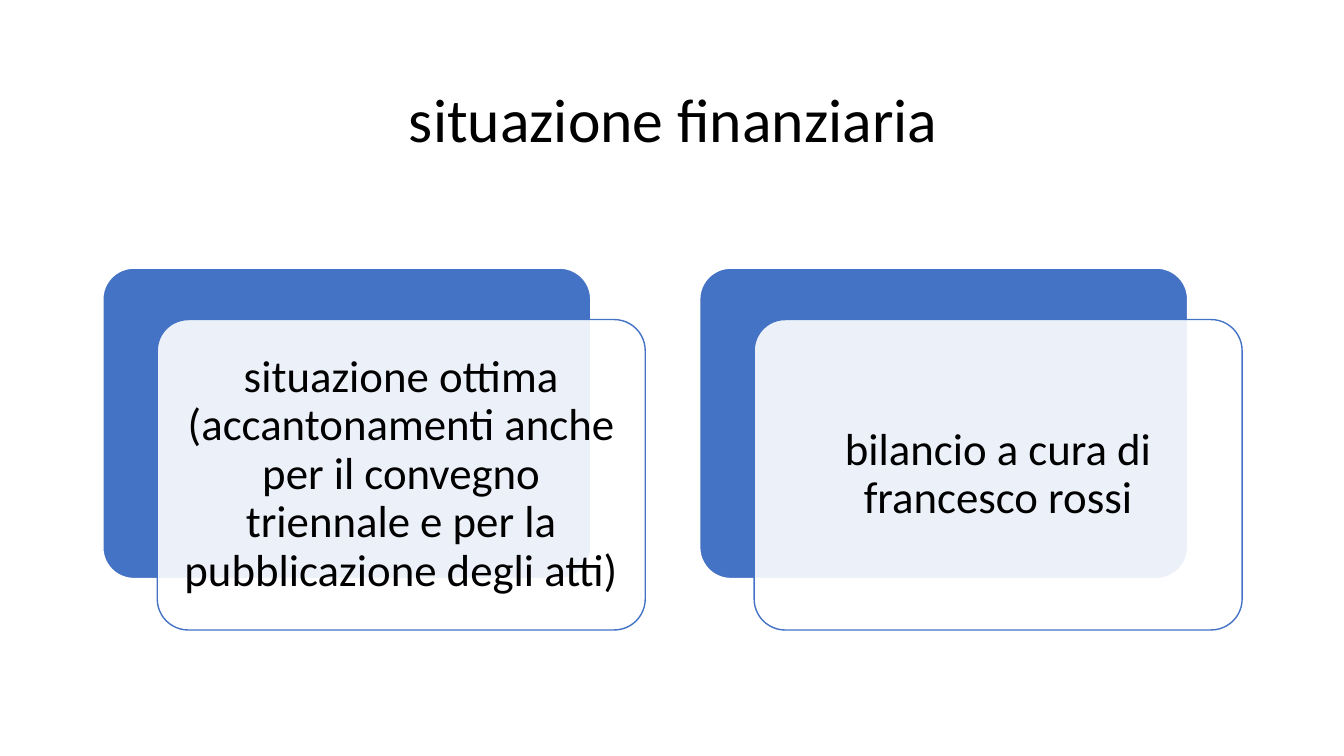
from dataclasses import dataclass

import lxml.etree
import pptx
import pptx.dml.color
import pptx.enum.shapes
import pptx.enum.text
import pptx.oxml.ns
import pptx.util

Inches = pptx.util.Inches


@dataclass(frozen=True)
class Theme:
    font: str = "Calibri"
    title_size: int = 44
    card_size: int = 32
    text: str = "000000"
    accent: str = "4472C4"
    paper: str = "FFFFFF"


def rgb(value):
    return pptx.dml.color.RGBColor.from_string(value)


def write_text(frame, text, *, font, size, color, inset):
    """Fill a frame with one centred paragraph."""
    frame.word_wrap = True
    frame.auto_size = pptx.enum.text.MSO_AUTO_SIZE.NONE
    frame.vertical_anchor = pptx.enum.text.MSO_ANCHOR.MIDDLE
    frame.margin_left = frame.margin_right = Inches(inset)
    frame.margin_top = frame.margin_bottom = Inches(inset)
    paragraph = frame.paragraphs[0]
    paragraph.alignment = pptx.enum.text.PP_ALIGN.CENTER
    paragraph.line_spacing = 0.9
    run = paragraph.add_run()
    run.text = text
    run.font.name = font
    run.font.size = pptx.util.Pt(size)
    run.font.color.rgb = rgb(color)


class SlideBuilder:
    def __init__(self, slide, theme):
        self.slide = slide
        self.theme = theme

    def title(self, text, left, top, width, height):
        title = self.slide.shapes.title
        title.left, title.top = Inches(left), Inches(top)
        title.width, title.height = Inches(width), Inches(height)
        write_text(title.text_frame, text, font=self.theme.font,
                   size=self.theme.title_size, color=self.theme.text, inset=0.1)

    def panel(self, left, top, width, height, fill, line, opacity=100):
        panel = self.slide.shapes.add_shape(
            pptx.enum.shapes.MSO_SHAPE.ROUNDED_RECTANGLE,
            Inches(left), Inches(top), Inches(width), Inches(height))
        panel.adjustments[0] = 0.1
        panel.shadow.inherit = False
        panel.fill.solid()
        panel.fill.fore_color.rgb = rgb(fill)
        panel.line.color.rgb = rgb(line)
        panel.line.width = pptx.util.Pt(1)
        if opacity < 100:
            color = panel.fill._xPr.find(".//" + pptx.oxml.ns.qn("a:srgbClr"))
            alpha = lxml.etree.SubElement(color, pptx.oxml.ns.qn("a:alpha"))
            alpha.set("val", str(opacity * 1000))
        return panel

    def card(self, text, left, top, width, height):
        """Draw a solid panel with a translucent text panel offset over it."""
        theme = self.theme
        self.panel(left, top, width, height, theme.accent, theme.paper)
        front = self.panel(left + 0.54, top + 0.51, width, height,
                           theme.paper, theme.accent, opacity=90)
        write_text(front.text_frame, text, font=theme.font,
                   size=theme.card_size, color=theme.text, inset=0.13)


def main():
    presentation = pptx.Presentation()
    presentation.slide_width = Inches(13.33)
    presentation.slide_height = Inches(7.5)
    slide = presentation.slides.add_slide(presentation.slide_layouts[5])
    builder = SlideBuilder(slide, Theme())

    builder.title("situazione finanziaria", 1.67, 0.6, 10.02, 1.24)
    cards = (
        "situazione ottima (accantonamenti anche per il convegno triennale "
        "e per la pubblicazione degli atti)",
        "bilancio a cura di francesco rossi",
    )
    for column, text in enumerate(cards):
        builder.card(text, 1.02 + column * 5.92, 2.66, 4.84, 3.08)

    presentation.save("out.pptx")


if __name__ == "__main__":
    main()
